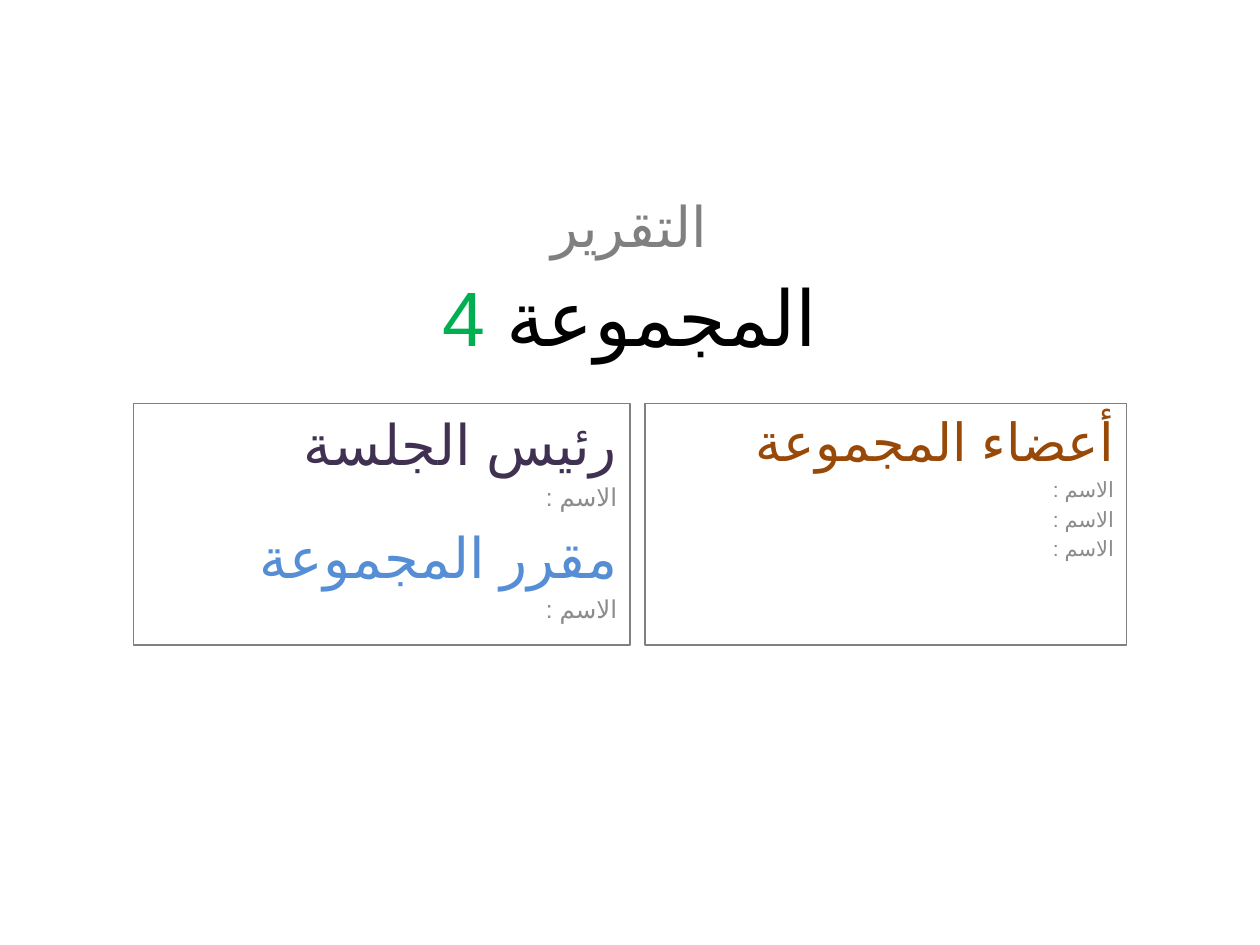
from dataclasses import dataclass

from lxml.etree import SubElement
from pptx import Presentation
from pptx.dml.color import RGBColor
from pptx.enum.shapes import MSO_SHAPE
from pptx.enum.text import MSO_ANCHOR, MSO_AUTO_SIZE, PP_ALIGN
from pptx.oxml.ns import qn
from pptx.util import Inches, Pt


@dataclass(frozen=True)
class Theme:
    font: str = "Calibri"
    arabic_font: str = "Arial"
    black: str = "000000"
    green: str = "00B050"
    gray: str = "808080"
    label: str = "8C8C8C"
    purple: str = "403152"
    blue: str = "558ED5"
    brown: str = "984807"
    title: int = 44
    heading: int = 32
    members: int = 30
    name: int = 14
    member_name: int = 12


@dataclass(frozen=True)
class Line:
    text: str
    size: int
    color: str


THEME = Theme()
NAME = "الاسم :"


def place(shape, left: float, top: float, width: float, height: float) -> None:
    shape.left, shape.top = Inches(left), Inches(top)
    shape.width, shape.height = Inches(width), Inches(height)


def prepare(shape, anchor=MSO_ANCHOR.TOP):
    frame = shape.text_frame
    frame.word_wrap = True
    frame.auto_size = MSO_AUTO_SIZE.NONE
    frame.vertical_anchor = anchor
    return frame


def format_para(para, align, rtl: bool = True, before: float = 0) -> None:
    para.alignment = align
    para.space_before = Pt(before)
    if rtl:
        para._p.get_or_add_pPr().set("rtl", "1")


def add_span(para, text: str, *, size: int, color: str) -> None:
    span = para.add_run()
    span.text = text
    span.font.name = THEME.font
    span.font.size = Pt(size)
    span.font.color.rgb = RGBColor.from_string(color)
    properties = span._r.get_or_add_rPr()
    properties.set("lang", "ar-SA")
    SubElement(properties, qn("a:cs"), typeface=THEME.arabic_font)


def fill_panel(box, lines: list[Line]) -> None:
    box.fill.background()
    box.line.color.rgb = RGBColor.from_string(THEME.gray)
    box.line.width = Pt(0.75)
    frame = prepare(box)
    for index, line in enumerate(lines):
        para = frame.add_paragraph() if index else frame.paragraphs[0]
        before = line.size * 0.2 if index else 0
        format_para(para, PP_ALIGN.RIGHT, before=before)
        add_span(para, line.text, size=line.size, color=line.color)


def main() -> None:
    deck = Presentation()
    deck.slide_width, deck.slide_height = Inches(10), Inches(7.5)
    page = deck.slides.add_slide(deck.slide_layouts[0])

    title = page.shapes.title
    place(title, 0.75, 1.86, 8.5, 1.29)
    para = prepare(title, MSO_ANCHOR.MIDDLE).paragraphs[0]
    format_para(para, PP_ALIGN.CENTER)
    add_span(para, "المجموعة ", size=THEME.title, color=THEME.black)
    add_span(para, "4", size=THEME.title, color=THEME.green)

    officers = page.placeholders[1]
    place(officers, 1.06, 3.2, 3.94, 1.92)
    name = Line(NAME, THEME.name, THEME.label)
    fill_panel(officers, [
        Line("رئيس الجلسة", THEME.heading, THEME.purple),
        name,
        Line("مقرر المجموعة", THEME.heading, THEME.blue),
        name,
    ])

    members = page.shapes.add_shape(
        MSO_SHAPE.RECTANGLE, Inches(5.12), Inches(3.2), Inches(3.82), Inches(1.92)
    )
    members.shadow.inherit = False
    member = Line(NAME, THEME.member_name, THEME.label)
    fill_panel(members, [
        Line("أعضاء المجموعة", THEME.members, THEME.brown),
        *[member] * 3,
    ])

    report = page.shapes.add_textbox(
        Inches(1.06), Inches(1.47), Inches(7.87), Inches(0.87)
    )
    para = prepare(report).paragraphs[0]
    format_para(para, PP_ALIGN.CENTER, rtl=False)
    add_span(para, "التقرير", size=THEME.heading, color=THEME.gray)

    deck.save("out.pptx")


if __name__ == "__main__":
    main()
